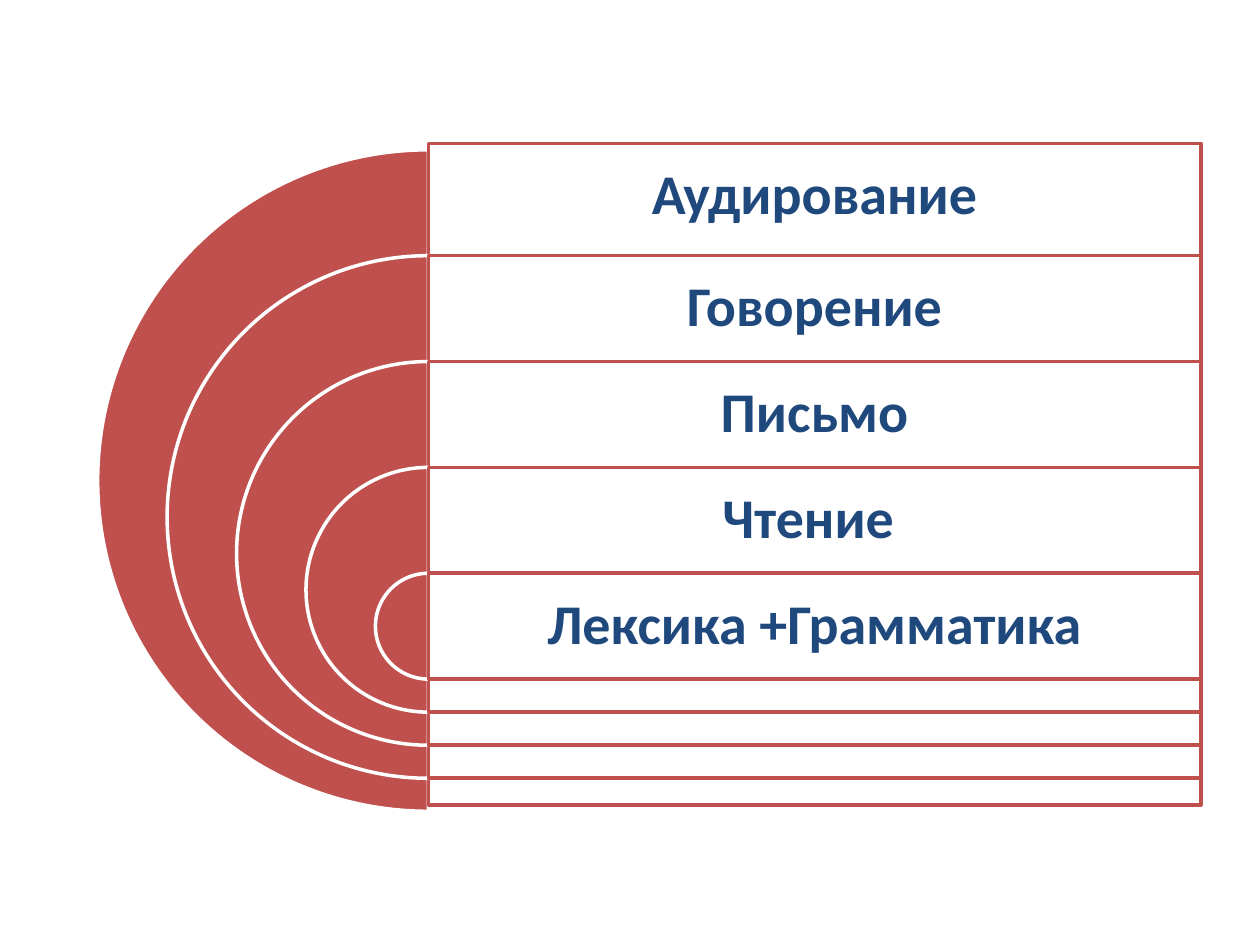
from pptx import Presentation
from pptx.dml.color import RGBColor
from pptx.enum.shapes import MSO_SHAPE
from pptx.enum.text import MSO_ANCHOR, PP_ALIGN
from pptx.oxml.ns import qn
from pptx.util import Pt
from lxml.etree import SubElement

COLORS = {"red": "C0504D", "white": "FFFFFF", "navy": "1F497D"}
SKILLS = ["Аудирование", "Говорение", "Письмо", "Чтение ", "Лексика +Грамматика"]
ROW = 60.5
FIRST_LIFT = 3.6


def add_box(s, kind, left, top, width, height, fill, line, opacity=100):
    sp = s.shapes.add_shape(kind, Pt(left), Pt(top), Pt(width), Pt(height))
    sp.shadow.inherit = False
    sp.fill.solid()
    sp.fill.fore_color.rgb = RGBColor.from_string(COLORS[fill])
    if opacity < 100:
        color = sp.fill._xPr.find(qn("a:solidFill"))[0]
        SubElement(color, qn("a:alpha"), val=str(opacity * 1000))
    sp.line.color.rgb = RGBColor.from_string(COLORS[line])
    sp.line.width = Pt(2)
    return sp


def add_text(s, text, left, top, width, height, size=32, color="navy",
             bold=True, font="Calibri", inset=9.6):
    sp = s.shapes.add_textbox(Pt(left), Pt(top), Pt(width), Pt(height))
    tf = sp.text_frame
    tf.word_wrap = True
    tf.vertical_anchor = MSO_ANCHOR.MIDDLE
    tf.margin_left = tf.margin_right = tf.margin_top = tf.margin_bottom = Pt(inset)
    p = tf.paragraphs[0]
    p.alignment = PP_ALIGN.CENTER
    p.line_spacing = 0.9
    r = p.add_run()
    r.text = text
    r.font.size = Pt(size)
    r.font.bold = bold
    r.font.name = font
    r.font.color.rgb = RGBColor.from_string(COLORS[color])


def add_target(s, left, top, width, diameter):
    axis = left + diameter / 2
    panel_width = left + width - axis
    shrink = (diameter - ROW) / (len(SKILLS) - 1)
    for i, skill in enumerate(SKILLS):
        size = diameter - i * shrink
        y = top + i * ROW
        pie = add_box(s, MSO_SHAPE.PIE, axis - size / 2, y, size, size, "red", "white")
        pie.adjustments[0] = 54
        pie.adjustments[1] = 162
        panel_y = y if i else y - FIRST_LIFT
        add_box(s, MSO_SHAPE.RECTANGLE, axis, panel_y, panel_width, size,
                "white", "red", opacity=90)
        add_text(s, skill, axis, panel_y, panel_width, ROW)


def main():
    prs = Presentation()
    prs.slide_width, prs.slide_height = Pt(720), Pt(540)
    s = prs.slides.add_slide(prs.slide_layouts[6])
    add_target(s, 55.8, 85.6, 630.4, 378)
    prs.save("out.pptx")


if __name__ == "__main__":
    main()
